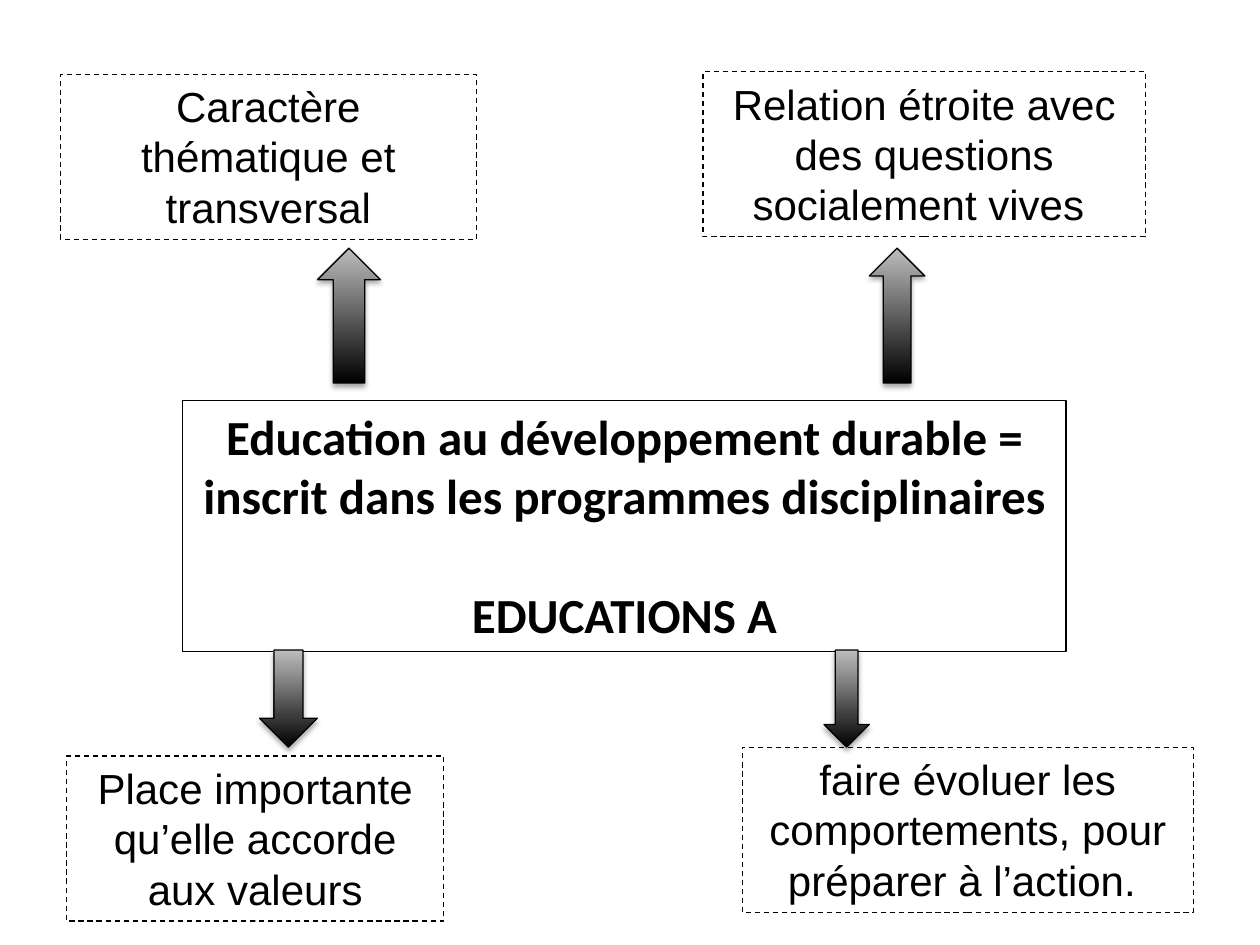
import pptx
import pptx.util
import pptx.dml.color
import pptx.enum.dml
import pptx.enum.shapes
import pptx.enum.text
import pptx.oxml

Inches, Pt = pptx.util.Inches, pptx.util.Pt
MSO_SHAPE = pptx.enum.shapes.MSO_SHAPE
COLORS = {"ink": "000000", "grey": "BDBDBD"}

SHADOW = (
    '<a:outerShdw xmlns:a="http://schemas.openxmlformats.org/drawingml/2006/main"'
    ' blurRad="{blur}" dist="{dist}" dir="5400000" rotWithShape="0">'
    '<a:srgbClr val="{color}"><a:alpha val="35000"/></a:srgbClr></a:outerShdw>'
)


def rgb(name):
    return pptx.dml.color.RGBColor.from_string(COLORS[name])


class Diagram:
    """Holds the shared style and the slide being drawn."""

    line_width = Pt(0.75)
    title_font, title_size = "Calibri", 28
    box_font, box_size = "Arial", 24

    def __init__(self, slide):
        self.s = slide

    def outline(self, sp, dashed=False):
        sp.line.color.rgb = rgb("ink")
        sp.line.width = self.line_width
        if dashed:
            sp.line.dash_style = pptx.enum.dml.MSO_LINE.DASH

    def add_text(self, sp, paragraphs, font, size, bold=False, gap=0):
        """Fill sp with centred paragraphs set gap points apart."""
        tf = sp.text_frame
        tf.word_wrap = True
        tf.auto_size = pptx.enum.text.MSO_AUTO_SIZE.SHAPE_TO_FIT_TEXT
        tf.vertical_anchor = pptx.enum.text.MSO_ANCHOR.TOP
        for i, text in enumerate(paragraphs):
            p = tf.add_paragraph() if i else tf.paragraphs[0]
            p.alignment = pptx.enum.text.PP_ALIGN.CENTER
            p.space_before = Pt(gap if i else 0)
            r = p.add_run()
            r.text = text
            r.font.name, r.font.size, r.font.bold = font, Pt(size), bold
            r.font.color.rgb = rgb("ink")

    def title(self, paragraphs, left, top, width, height):
        sp = self.s.shapes.title
        sp.left, sp.top = Inches(left), Inches(top)
        sp.width, sp.height = Inches(width), Inches(height)
        self.outline(sp)
        self.add_text(sp, paragraphs, self.title_font, self.title_size, bold=True, gap=34)

    def box(self, text, left, top, width, height=1.31):
        sp = self.s.shapes.add_textbox(
            Inches(left), Inches(top), Inches(width), Inches(height))
        self.outline(sp, dashed=True)
        self.add_text(sp, [text], self.box_font, self.box_size)

    def arrow(self, shape, left, top, width, height):
        sp = self.s.shapes.add_shape(
            shape, Inches(left), Inches(top), Inches(width), Inches(height))
        self.outline(sp)
        sp.fill.gradient()
        sp.fill.gradient_angle = 90
        for stop, name, position in zip(sp.fill.gradient_stops, ("ink", "grey"), (0, 1)):
            stop.color.rgb = rgb(name)
            stop.position = position
        sp.shadow.inherit = False
        effects = sp.element.spPr.find(pptx.oxml.ns.qn("a:effectLst"))
        effects.append(pptx.oxml.parse_xml(SHADOW.format(
            blur=Pt(3.1), dist=Pt(1.8), color=COLORS["ink"])))


def main():
    prs = pptx.Presentation()
    prs.slide_width, prs.slide_height = Inches(10), Inches(7.5)
    title_only = prs.slide_layouts[5]
    d = Diagram(prs.slides.add_slide(title_only))

    d.title(["Education au développement durable = inscrit dans les programmes disciplinaires",
             "EDUCATIONS A"], 1.45, 3.18, 7.01, 1.99)

    for text, left, top, width in (
        ("Caractère thématique et transversal", 0.48, 0.59, 3.3),
        ("Relation étroite avec des questions socialement vives ", 5.58, 0.57, 3.51),
        ("Place importante qu’elle accorde aux valeurs", 0.53, 6, 2.99),
        ("faire évoluer les comportements, pour préparer à l’action. ", 5.89, 5.93, 3.58),
    ):
        d.box(text, left, top, width)

    for shape, top, height, columns in (
        (MSO_SHAPE.UP_ARROW, 1.97, 1.07, ((2.52, 0.5), (6.9, 0.44))),
        (MSO_SHAPE.DOWN_ARROW, 5.16, 0.77, ((2.06, 0.46), (6.54, 0.36))),
    ):
        for left, width in columns:
            d.arrow(shape, left, top, width, height)

    prs.save("out.pptx")


if __name__ == "__main__":
    main()
